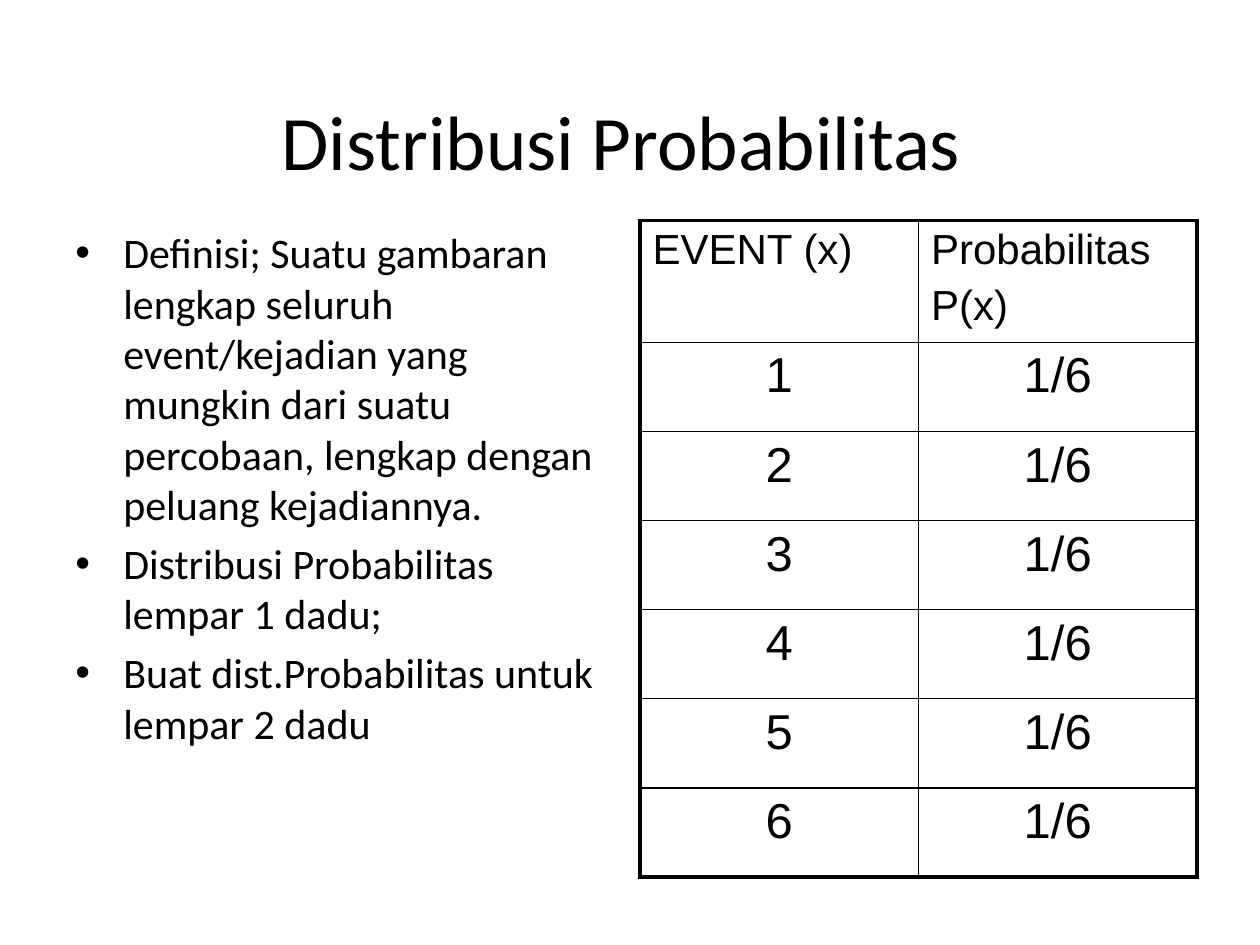
from dataclasses import dataclass

from lxml.etree import SubElement
from pptx import Presentation
from pptx.dml.color import RGBColor
from pptx.enum.text import MSO_ANCHOR, PP_ALIGN
from pptx.oxml.ns import qn
from pptx.util import Inches, Pt


@dataclass(frozen=True)
class Theme:
    ink: str = "000000"
    text_font: str = "Calibri"
    table_font: str = "Arial"
    title_size: int = 44
    body_size: int = 24
    value_size: int = 28
    paragraph_gap: float = 4.8
    outer_line: float = 2.25
    inner_line: float = 1


THEME = Theme()
TITLE = "Distribusi Probabilitas "
POINTS = [
    "Definisi; Suatu gambaran lengkap seluruh event/kejadian yang mungkin "
    "dari suatu percobaan, lengkap dengan peluang kejadiannya.",
    "Distribusi Probabilitas lempar 1 dadu;",
    "Buat dist.Probabilitas untuk lempar 2 dadu",
]
HEADINGS = [["EVENT (x)"], ["Probabilitas", "P(x)"]]
DICE_FACES = range(1, 7)


def add_bullet(paragraph):
    properties = paragraph._p.get_or_add_pPr()
    properties.set("marL", str(Inches(0.38)))
    properties.set("indent", str(Inches(-0.38)))
    SubElement(properties, qn("a:buFont")).set("typeface", "Arial")
    SubElement(properties, qn("a:buChar")).set("char", "•")


def write_text(frame, lines, *, size, font=THEME.text_font,
               align=PP_ALIGN.LEFT, bulleted=False):
    frame.word_wrap = True
    for index, line in enumerate(lines):
        paragraph = frame.add_paragraph() if index else frame.paragraphs[0]
        paragraph.alignment = align
        if index:
            paragraph.space_before = Pt(THEME.paragraph_gap)
        if bulleted:
            add_bullet(paragraph)
        run = paragraph.add_run()
        run.text = line
        run.font.size = Pt(size)
        run.font.name = font
        run.font.bold = False
        run.font.color.rgb = RGBColor.from_string(THEME.ink)


def add_text_box(slide, left, top, width, height, lines,
                 anchor=MSO_ANCHOR.TOP, **text_format):
    frame = slide.shapes.add_textbox(
        Inches(left), Inches(top), Inches(width), Inches(height)).text_frame
    frame.vertical_anchor = anchor
    write_text(frame, lines, **text_format)


def set_borders(cell, outer_sides):
    properties = cell._tc.get_or_add_tcPr()
    for side in ("L", "R", "T", "B"):
        weight = THEME.outer_line if side in outer_sides else THEME.inner_line
        border = SubElement(properties, qn(f"a:ln{side}"), w=str(Pt(weight)))
        fill = SubElement(border, qn("a:solidFill"))
        SubElement(fill, qn("a:srgbClr"), val=THEME.ink)


def add_probability_table(slide):
    rows = [HEADINGS] + [[[str(face)], ["1/6"]] for face in DICE_FACES]
    row_count, column_count = len(rows), len(HEADINGS)
    table = slide.shapes.add_table(
        row_count, column_count,
        Inches(5.08), Inches(1.75), Inches(4.42), Inches(4.95)).table
    table.first_row = False
    table.horz_banding = False
    for row, contents in enumerate(rows):
        for column, lines in enumerate(contents):
            cell = table.cell(row, column)
            is_heading = row == 0
            write_text(
                cell.text_frame, lines, font=THEME.table_font,
                size=THEME.body_size if is_heading else THEME.value_size,
                align=PP_ALIGN.LEFT if is_heading else PP_ALIGN.CENTER)
            edges = {"T": row == 0, "B": row == row_count - 1,
                     "L": column == 0, "R": column == column_count - 1}
            set_borders(cell, {side for side, outer in edges.items() if outer})
            cell.fill.background()


def main():
    presentation = Presentation()
    presentation.slide_width = Inches(10)
    presentation.slide_height = Inches(7.5)
    slide = presentation.slides.add_slide(presentation.slide_layouts[6])
    add_text_box(slide, 0.5, 0.67, 9, 0.88, [TITLE], MSO_ANCHOR.MIDDLE,
                 size=THEME.title_size, align=PP_ALIGN.CENTER)
    add_text_box(slide, 0.5, 1.75, 4.42, 4.95, POINTS,
                 size=THEME.body_size, bulleted=True)
    add_probability_table(slide)
    presentation.save("out.pptx")


if __name__ == "__main__":
    main()
